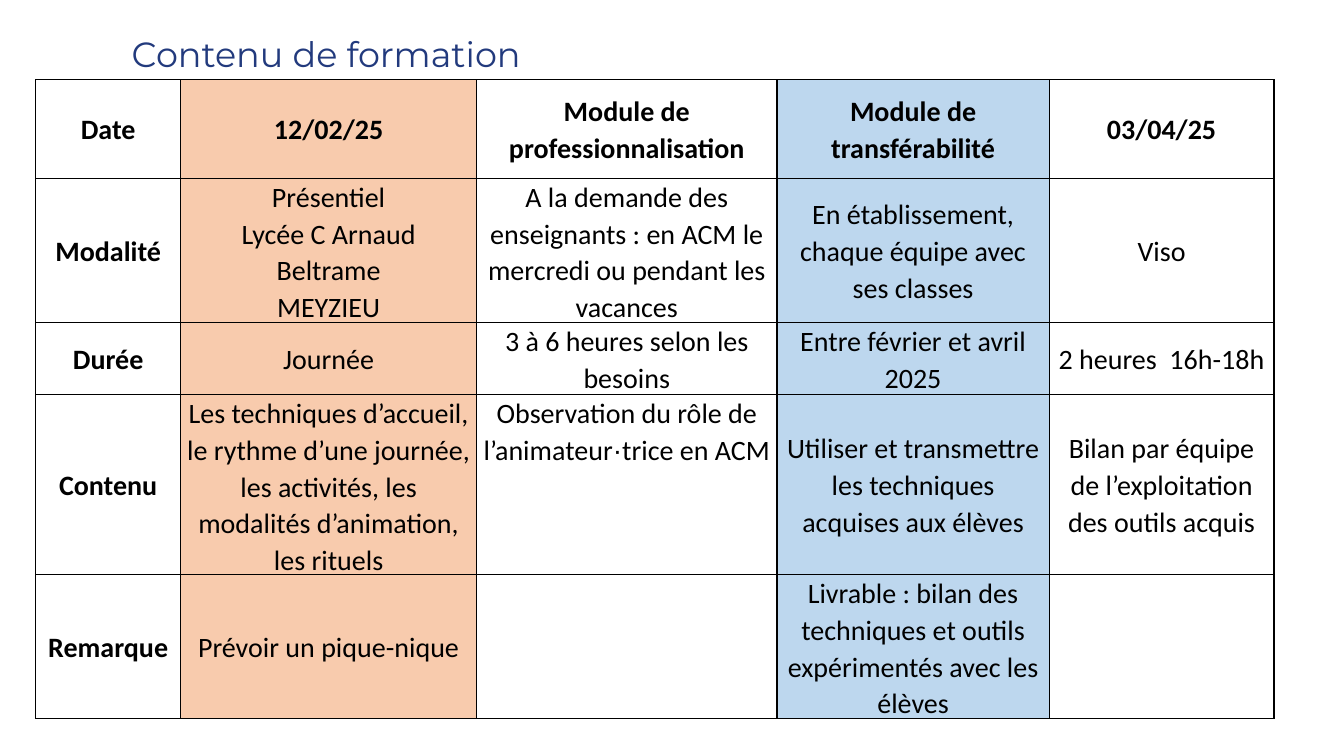
from lxml.etree import SubElement
from pptx import Presentation
from pptx.dml.color import RGBColor
from pptx.enum.text import MSO_ANCHOR as Anchor, PP_ALIGN as Align
from pptx.oxml.ns import qn
from pptx.util import Pt

COLUMN_WIDTHS = [103.5, 211.5, 214.5, 194.5, 160.5]
ROW_HEIGHTS = [70.5, 103, 51.5, 128.5, 103]
COLUMN_FILLS = {1: "F8CBAD", 3: "BDD7EE"}
TOP_ALIGNED = {(3, 2)}
CELL_FORMAT = {"margin_left": Pt(4.5), "margin_right": Pt(4.5),
               "margin_top": 0, "margin_bottom": 0}
PROGRAMME = [
    ["Date", "12/02/25", "Module de professionnalisation",
     "Module de transférabilité", "03/04/25"],
    ["Modalité", "Présentiel\nLycée C Arnaud Beltrame\nMEYZIEU",
     "A la demande des enseignants : en ACM le mercredi ou pendant les vacances",
     "En établissement, chaque équipe avec ses classes", "Viso"],
    ["Durée", "Journée", "3 à 6 heures selon les besoins",
     "Entre février et avril 2025", "2 heures  16h-18h"],
    ["Contenu",
     "Les techniques d’accueil, le rythme d’une journée, les activités, "
     "les modalités d’animation, les rituels",
     "Observation du rôle de l’animateur·trice en ACM",
     "Utiliser et transmettre les techniques acquises aux élèves",
     "Bilan par équipe de l’exploitation des outils acquis"],
    ["Remarque", "Prévoir un pique-nique", "",
     "Livrable : bilan des techniques et outils expérimentés avec les élèves", ""],
]


def color(hex_code):
    return RGBColor.from_string(hex_code)


def apply_format(target, values):
    for name, value in values.items():
        setattr(target, name, value)


def style_font(font, hex_code, **values):
    apply_format(font, values)
    font.color.rgb = color(hex_code)


def add_borders(cell):
    """Draw a thin black line on all four sides; lines must precede the fill."""
    properties = cell._tc.get_or_add_tcPr()
    for side in ("a:lnL", "a:lnR", "a:lnT", "a:lnB"):
        line = SubElement(properties, qn(side), w=str(Pt(1)))
        fill = SubElement(line, qn("a:solidFill"))
        SubElement(fill, qn("a:srgbClr"), val="000000")


def write_cell_text(cell, text, bold):
    """Write one paragraph per line, with the middle dot in its own font."""
    frame = cell.text_frame
    for index, line in enumerate(text.split("\n")):
        paragraph = frame.add_paragraph() if index else frame.paragraphs[0]
        apply_format(paragraph, {"alignment": Align.CENTER, "line_spacing": 1.07})
        before, dot, after = line.partition("·")
        for part in filter(None, (before, dot, after)):
            run = paragraph.add_run()
            run.text = part
            style_font(run.font, "000000", size=Pt(20), bold=bold,
                       name="Arial" if part == "·" else "Calibri")


def add_title(slide, left, top, width, height):
    box = slide.shapes.add_textbox(Pt(left), Pt(top), Pt(width), Pt(height))
    box.text_frame.word_wrap = True
    run = box.text_frame.paragraphs[0].add_run()
    run.text = "Contenu de formation"
    style_font(run.font, "223A7D", name="Montserrat", size=Pt(25))


def add_programme(slide, left, top):
    shape = slide.shapes.add_table(
        len(ROW_HEIGHTS), len(COLUMN_WIDTHS), Pt(left), Pt(top),
        Pt(sum(COLUMN_WIDTHS)), Pt(sum(ROW_HEIGHTS)))
    table = shape.table
    apply_format(table, {"first_row": False, "horz_banding": False})
    for column, width in zip(table.columns, COLUMN_WIDTHS):
        column.width = Pt(width)
    for row, height in zip(table.rows, ROW_HEIGHTS):
        row.height = Pt(height)

    for r, texts in enumerate(PROGRAMME):
        for c, text in enumerate(texts):
            cell = table.cell(r, c)
            apply_format(cell, CELL_FORMAT)
            cell.vertical_anchor = Anchor.TOP if (r, c) in TOP_ALIGNED else Anchor.MIDDLE
            add_borders(cell)
            if c in COLUMN_FILLS:
                cell.fill.solid()
                cell.fill.fore_color.rgb = color(COLUMN_FILLS[c])
            else:
                cell.fill.background()
            write_cell_text(cell, text, bold=r == 0 or c == 0)


def main():
    presentation = Presentation()
    apply_format(presentation, {"slide_width": Pt(960), "slide_height": Pt(540)})
    slide = presentation.slides.add_slide(presentation.slide_layouts[6])
    add_title(slide, 87, 20, 851, 37.5)
    add_programme(slide, 25.5, 57)
    presentation.save("out.pptx")


if __name__ == "__main__":
    main()
